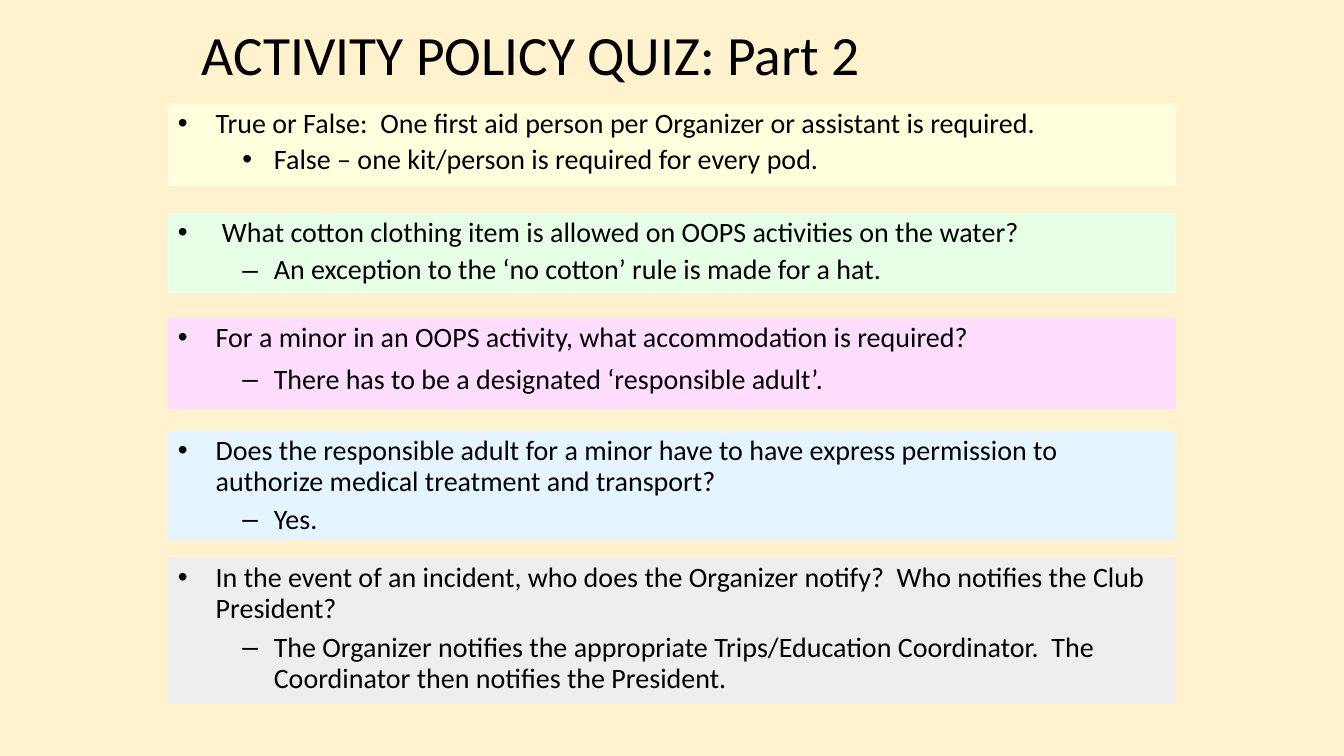
from pptx import Presentation
from pptx.util import Pt
from pptx.dml.color import RGBColor as RGB
from pptx.enum.shapes import MSO_SHAPE as SHAPE
from pptx.enum.text import MSO_ANCHOR as ANCHOR, MSO_AUTO_SIZE as AUTO, PP_ALIGN as ALIGN
from pptx.oxml.ns import qn
from lxml.etree import SubElement

COLORS = {"background": "FFF2CC", "text": "000000", "yellow": "FFFFDD",
          "green": "E7FFE7", "pink": "FFDDFF", "blue": "E5F5FF", "gray": "EEEEEE"}
FRAME = {"word_wrap": True, "auto_size": AUTO.NONE, "margin_left": Pt(7.2),
         "margin_right": Pt(7.2), "margin_top": Pt(3.6), "margin_bottom": Pt(3.6)}

# Paragraph formats: level, line spacing, space before, left indent, hanging, bullet
QUESTION = (0, 0.93, 8, 27, 27, "•")
ANSWER = (1, 0.93, 7, 58.5, 22.5, "–")
FIRST_ANSWER = (1, 0.9, 5, 54, 18, "•")

# Fill, question top and height, question, answer top and height, answer
QUIZ = [
    ("yellow", 74, 59, "True or False:  One first aid person per Organizer or assistant is required.",
     100, 41, " False – one kit/person is required for every pod."),
    ("green", 152, 57.6, " What cotton clothing item is allowed on OOPS activities on the water?",
     178.6, 41, "An exception to the ‘no cotton’ rule is made for a hat."),
    ("pink", 227, 65.5, "For a minor in an OOPS activity, what accommodation is required?",
     257, 38, "There has to be a designated ‘responsible adult’."),
    ("blue", 307.5, 78.5, "Does the responsible adult for a minor have to have express permission "
     "to authorize medical treatment and transport?",
     357, 32, "Yes."),
    ("gray", 398, 105, "In the event of an incident, who does the Organizer notify?  "
     "Who notifies the Club President?",
     448, 57, "The Organizer notifies the appropriate Trips/Education Coordinator.  "
     "The Coordinator then notifies the President."),
]


def place(sp, left, top, width, height):
    sp.left, sp.top, sp.width, sp.height = Pt(left), Pt(top), Pt(width), Pt(height)


def write(sp, text, size, anchor, line, before):
    tf = sp.text_frame
    for name, value in {**FRAME, "vertical_anchor": anchor}.items():
        setattr(tf, name, value)
    p = tf.paragraphs[0]
    p.alignment, p.line_spacing, p.space_before = ALIGN.LEFT, line, Pt(before)
    r = p.add_run()
    r.text = text
    r.font.name, r.font.size = "Calibri", Pt(size)
    r.font.color.rgb = RGB.from_string(COLORS["text"])
    return p


# Slide and background
prs = Presentation()
prs.slide_width, prs.slide_height = Pt(960), Pt(540)
s = prs.slides.add_slide(prs.slide_layouts[1])
s.background.fill.solid()
s.background.fill.fore_color.rgb = RGB.from_string(COLORS["background"])

# Title
title, body = s.placeholders
place(title, 137, 14.4, 684, 53)
write(title, "ACTIVITY POLICY QUIZ: Part 2", 39.6, ANCHOR.MIDDLE, 0.9, 0)

# Quiz: a coloured band for each question, with its answer on top
for i, (color, q_top, q_height, question, a_top, a_height, answer) in enumerate(QUIZ):
    band = s.shapes.add_shape(SHAPE.RECTANGLE, Pt(120), Pt(q_top), Pt(720), Pt(q_height))
    band.shadow.inherit = False
    band.fill.solid()
    band.fill.fore_color.rgb = RGB.from_string(COLORS[color])
    band.line.fill.background()

    if i == 0:
        reply, reply_format = body, FIRST_ANSWER
        s.shapes._spTree.append(body._element)  # bring in front of its band
    else:
        reply, reply_format = s.shapes.add_textbox(0, 0, 0, 0), ANSWER
    place(reply, 130, a_top, 692, a_height)

    for sp, text, fmt in ((band, question, QUESTION), (reply, answer, reply_format)):
        level, line, before, indent, hanging, bullet = fmt
        p = write(sp, text, 20, ANCHOR.TOP, line, before)
        p.level = level
        pPr = p._p.get_or_add_pPr()
        pPr.set("marL", str(Pt(indent)))
        pPr.set("indent", str(-Pt(hanging)))
        SubElement(SubElement(pPr, qn("a:buClr")), qn("a:srgbClr"), val=COLORS["text"])
        SubElement(pPr, qn("a:buFont"), typeface="Arial")
        SubElement(pPr, qn("a:buChar"), char=bullet)

prs.save("out.pptx")
